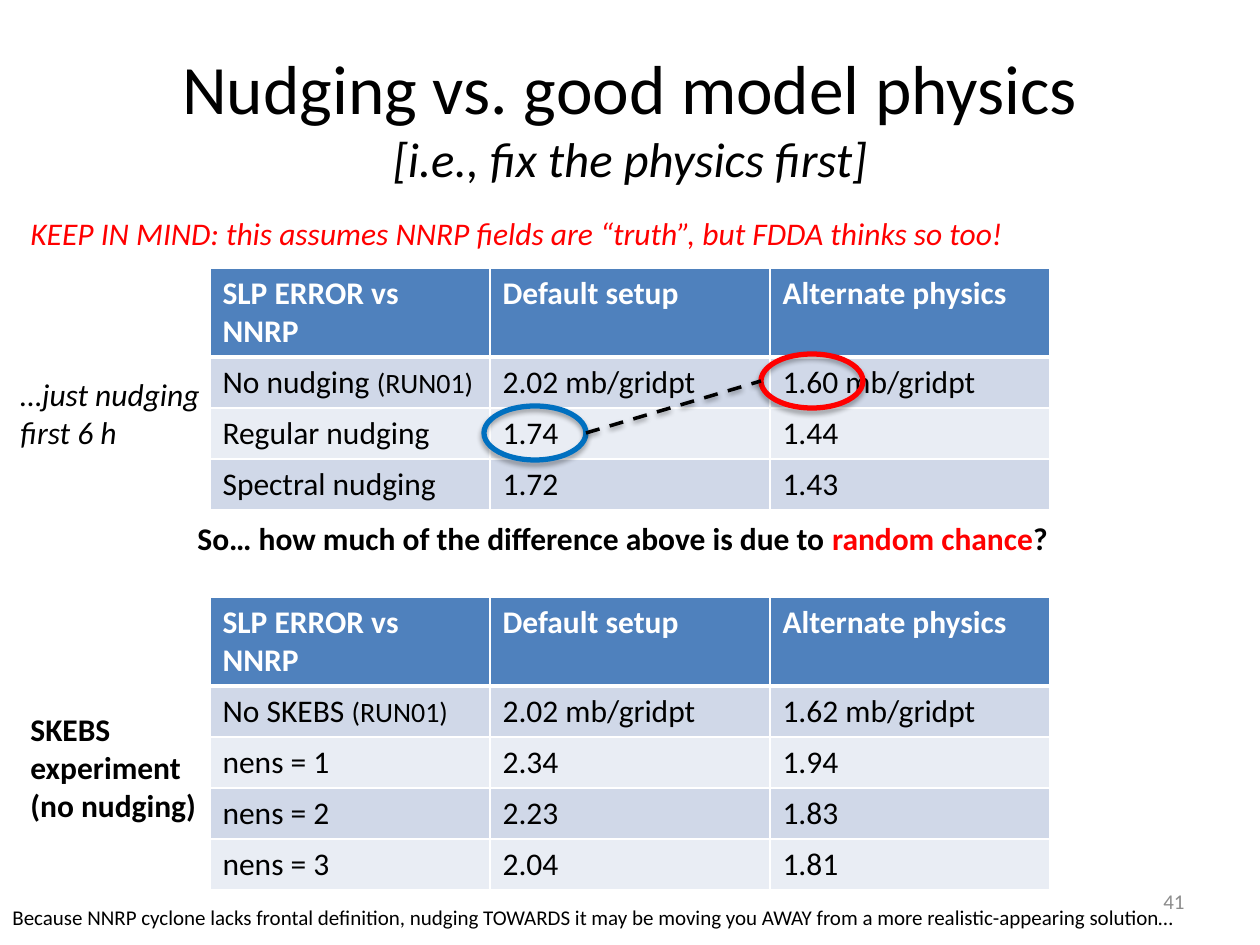
import lxml.etree
import pptx
import pptx.dml.color
import pptx.enum.dml
import pptx.enum.shapes
import pptx.enum.text
import pptx.oxml.ns
import pptx.util

SCALE = 914400 / 126
FONT = "Calibri"
COLORS = {
    "black": "000000", "white": "FFFFFF", "gray": "8C8C8C", "red": "FF0000",
    "blue": "0070C0", "header": "4F81BD", "dark_band": "D0D8E8", "light_band": "E9EDF4",
}
ALIGN = pptx.enum.text.PP_ALIGN
ANCHOR = pptx.enum.text.MSO_ANCHOR
HEADINGS = ["SLP ERROR vs NNRP", "Default setup", "Alternate physics"]
NUDGING_ROWS = [
    ["No nudging |(RUN01)", "2.02 mb/gridpt", "1.60 mb/gridpt"],
    ["Regular nudging", "1.74", "1.44"],
    ["Spectral nudging", "1.72", "1.43"],
]
SKEBS_ROWS = [
    ["No SKEBS |(RUN01)", "2.02 mb/gridpt", "1.62 mb/gridpt"],
    ["nens = 1", "2.34", "1.94"],
    ["nens = 2", "2.23", "1.83"],
    ["nens = 3", "2.04", "1.81"],
]


def px(length):
    """Turn px into EMU."""
    return pptx.util.Emu(round(length * SCALE))


def rgb(name):
    """Look up a colour by name."""
    return pptx.dml.color.RGBColor.from_string(COLORS[name])


def add_span(para, text, size=18, color="black", **formats):
    """Append one formatted span to a paragraph."""
    span = para.add_run()
    span.text = text
    values = {"name": FONT, "size": pptx.util.Pt(size), **formats}
    for name, value in values.items():
        setattr(span.font, name, value)
    span.font.color.rgb = rgb(color)


def add_text_box(page, box, **formats):
    """Add an empty text box and return its frame."""
    frame = page.shapes.add_textbox(*map(px, box)).text_frame
    for name, value in formats.items():
        setattr(frame, name, value)
    return frame


def add_title(page, box):
    """Place the centred title and its smaller italic second line."""
    frame = add_text_box(page, box, word_wrap=True, vertical_anchor=ANCHOR.MIDDLE)
    para = frame.paragraphs[0]
    para.alignment = ALIGN.CENTER
    add_span(para, "Nudging vs. good model physics", 39.6)
    para.add_line_break()
    add_span(para, "[i.e., fix the physics first]", 27.9, italic=True)


def add_page_number(page, box, number):
    """Place the page number at the right of its box."""
    frame = add_text_box(page, box, word_wrap=True, vertical_anchor=ANCHOR.MIDDLE)
    frame.paragraphs[0].alignment = ALIGN.RIGHT
    add_span(frame.paragraphs[0], number, 12, "gray")


def add_note(page, box, lines, **formats):
    """Place an unwrapped note with one paragraph for each line of spans."""
    frame = add_text_box(page, box, word_wrap=False,
                         auto_size=pptx.enum.text.MSO_AUTO_SIZE.SHAPE_TO_FIT_TEXT)
    for index, spans in enumerate(lines):
        para = frame.add_paragraph() if index else frame.paragraphs[0]
        for text, color in spans:
            add_span(para, text, color=color, **formats)


def set_borders(cell, widths):
    """Draw white cell borders of the given widths in points."""
    properties = cell._tc.get_or_add_tcPr()
    for index, (side, width) in enumerate(widths.items()):
        line = lxml.etree.Element(pptx.oxml.ns.qn(f"a:ln{side}"), w=str(pptx.util.Pt(width)))
        fill = lxml.etree.SubElement(line, pptx.oxml.ns.qn("a:solidFill"))
        lxml.etree.SubElement(fill, pptx.oxml.ns.qn("a:srgbClr"), val=COLORS["white"])
        properties.insert(index, line)


def add_error_table(page, box, body, header_height=89):
    """Place an error table with a header and banded rows."""
    rows = [HEADINGS] + body
    table = page.shapes.add_table(len(rows), len(HEADINGS), *map(px, box)).table
    for column in table.columns:
        column.width = px(box[2] // len(HEADINGS))
    row_height = (box[3] - header_height) // len(body)
    for r, texts in enumerate(rows):
        table.rows[r].height = px(row_height if r else header_height)
        band = ("light_band" if r % 2 == 0 else "dark_band") if r else "header"
        for c, text in enumerate(texts):
            cell = table.cell(r, c)
            cell.fill.solid()
            cell.fill.fore_color.rgb = rgb(band)
            set_borders(cell, {"L": 1, "R": 1, "T": 3 if r == 1 else 1, "B": 1 if r else 3})
            for size, part in zip((18, 16), text.split("|")):
                add_span(cell.text_frame.paragraphs[0], part, size,
                         "black" if r else "white", bold=r == 0)


def add_shadow(shape, opacity, distance):
    """Give a shape a soft shadow straight below it."""
    qn = pptx.oxml.ns.qn
    effects = lxml.etree.SubElement(shape._element.spPr, qn("a:effectLst"))
    shadow = lxml.etree.SubElement(effects, qn("a:outerShdw"), blurRad=str(pptx.util.Pt(3.1)),
                                   dist=str(pptx.util.Pt(distance)), dir="5400000",
                                   rotWithShape="0")
    color = lxml.etree.SubElement(shadow, qn("a:srgbClr"), val=COLORS["black"])
    lxml.etree.SubElement(color, qn("a:alpha"), val=str(opacity * 1000))


def add_ring(page, box, color):
    """Circle a table value with an unfilled ellipse."""
    ring = page.shapes.add_shape(pptx.enum.shapes.MSO_SHAPE.OVAL, *map(px, box))
    ring.fill.background()
    ring.line.color.rgb = rgb(color)
    ring.line.width = pptx.util.Pt(3)
    add_shadow(ring, 35, 1.8)


def add_comparison(page, box, ring_size=(102, 54)):
    """Circle two values at opposite corners of a box and join them by a dashed line."""
    left, top, width, height = box
    ring_width, ring_height = ring_size
    right = left + width - ring_width
    bottom = top + height - ring_height
    add_ring(page, (left, bottom, *ring_size), "blue")
    add_ring(page, (right, top, *ring_size), "red")
    ends = (left + ring_width, bottom + ring_height // 2, right, top + ring_height // 2)
    link = page.shapes.add_connector(pptx.enum.shapes.MSO_CONNECTOR.STRAIGHT, *map(px, ends))
    link.line.color.rgb = rgb("black")
    link.line.width = pptx.util.Pt(2)
    link.line.dash_style = pptx.enum.dml.MSO_LINE.DASH
    add_shadow(link, 38, 1.6)


def build_page(page):
    """Place every region of the page."""
    add_title(page, (63, 38, 1134, 157))
    add_page_number(page, (903, 876, 294, 50), "41")
    add_error_table(page, (210, 268, 840, 242), NUDGING_ROWS)
    add_error_table(page, (210, 597, 840, 293), SKEBS_ROWS)
    add_note(page, (185, 513, 901, 50), [[
        ("So… how much of the difference above is due to ", "black"),
        ("random chance", "red"), ("?", "black")]], bold=True)
    add_note(page, (18, 704, 193, 127), [
        [("SKEBS", "black")], [("experiment", "black")], [("(no nudging)", "black")]], bold=True)
    add_note(page, (8, 369, 217, 89), [
        [("…just nudging", "black")], [("first 6 h", "black")]], italic=True)
    add_note(page, (18, 208, 1021, 50), [[
        ("KEEP IN MIND: this assumes NNRP fields are “truth”, but FDDA thinks so too!", "red")]],
        italic=True)
    add_note(page, (0, 898, 1191, 38), [[
        ("Because NNRP cyclone lacks frontal definition, nudging TOWARDS it may be "
         "moving you AWAY from a more realistic-appearing solution…", "black")]], size=12)
    add_comparison(page, (484, 354, 379, 106))


def main():
    """Build and save the deck."""
    deck = pptx.Presentation()
    deck.slide_width, deck.slide_height = px(1260), px(945)
    build_page(deck.slides.add_slide(deck.slide_layouts[6]))
    deck.save("out.pptx")


if __name__ == "__main__":
    main()
